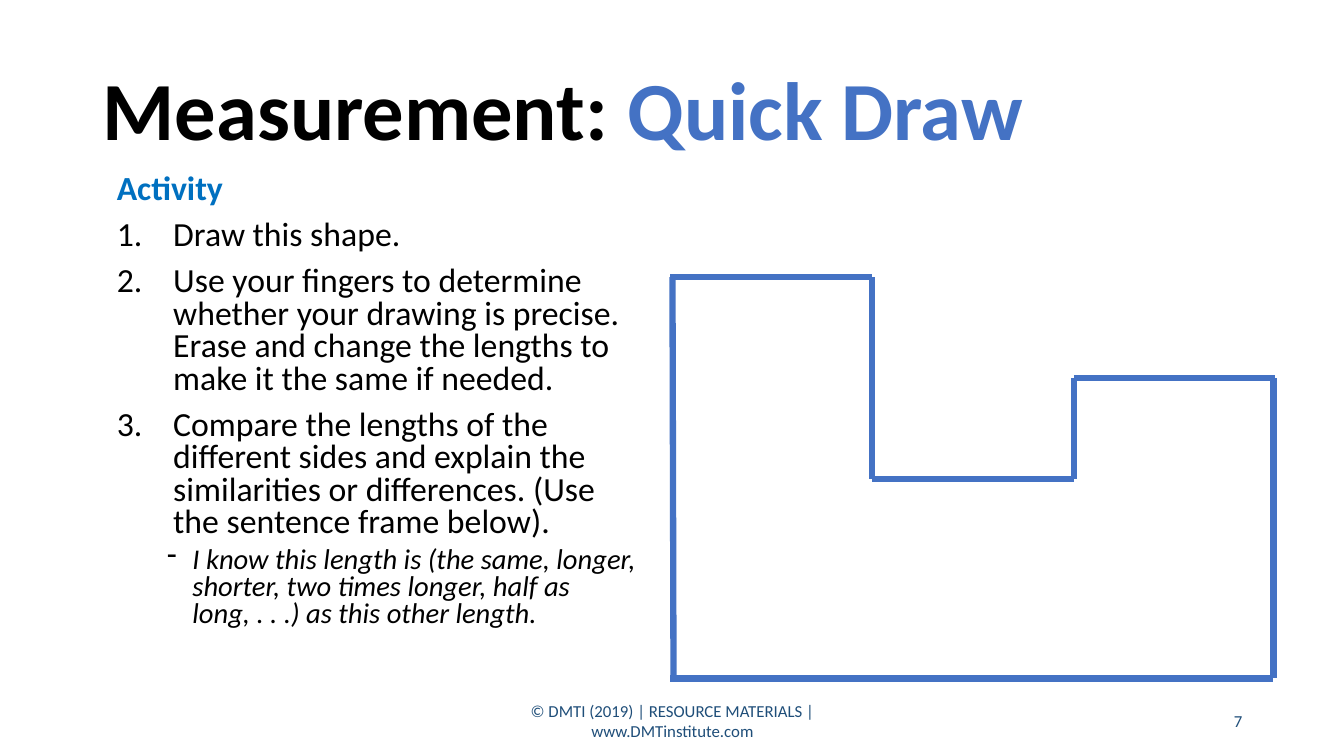
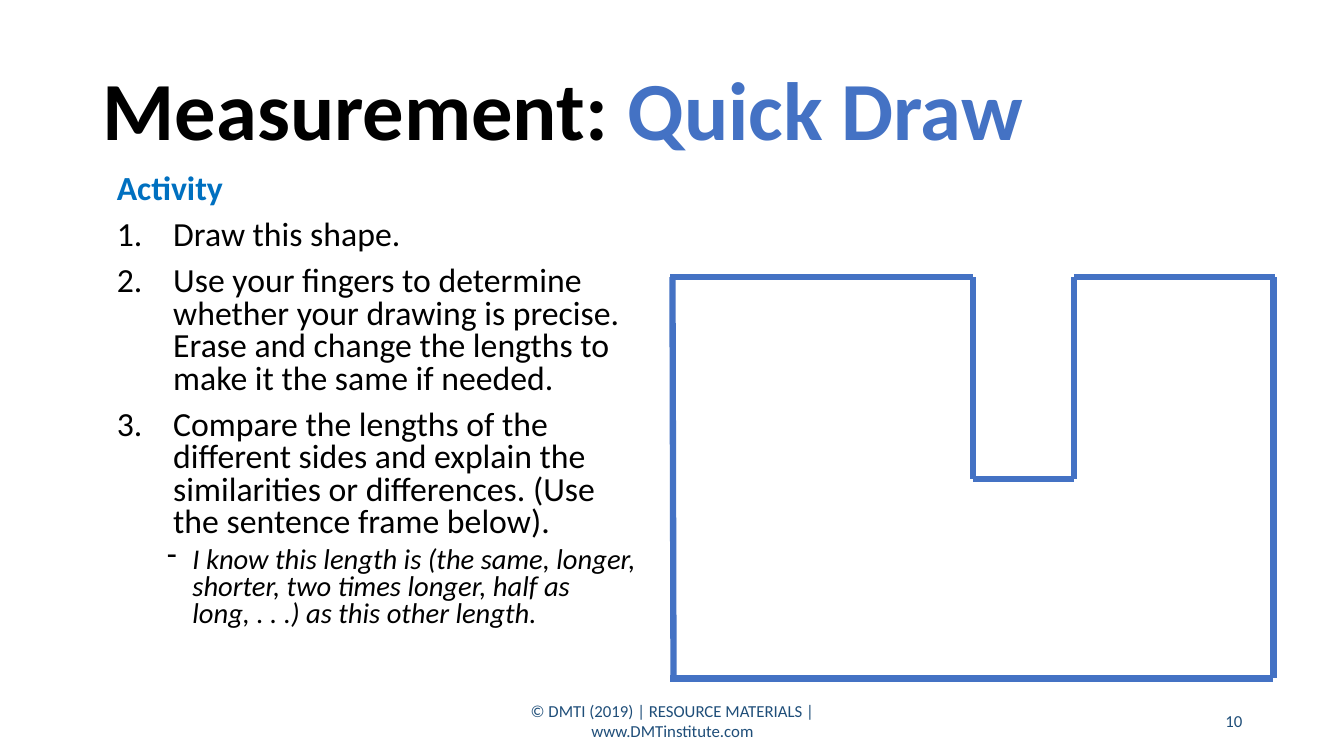
from lxml.etree import SubElement
from pptx import Presentation
from pptx.dml.color import RGBColor
from pptx.enum.shapes import MSO_CONNECTOR
from pptx.enum.text import MSO_ANCHOR, PP_ALIGN
from pptx.oxml.ns import qn
from pptx.util import Inches, Pt

BLACK = RGBColor(0x00, 0x00, 0x00)
BLUE = RGBColor(0x44, 0x72, 0xC4)
HEADING_BLUE = RGBColor(0x00, 0x70, 0xC0)
FOOTER_BLUE = RGBColor(0x1F, 0x4E, 0x79)

# Text styles
FONT = "Calibri"
TITLE = {"size": Pt(59), "bold": True}
HEADING = {"size": Pt(24.1), "bold": True}
STEP = {"size": Pt(24.1)}
FRAME = {"size": Pt(20.4), "italic": True}
FOOTER = {"size": Pt(12)}

STEPS = [
    "Draw this shape.",
    "Use your fingers to determine whether your drawing is precise. "
    "Erase and change the lengths to make it the same if needed.",
    "Compare the lengths of the different sides and explain the similarities "
    "or differences. (Use the sentence frame below).",
]
SENTENCE_FRAME = ("I know this length is (the same, longer, shorter, two times longer, "
                  "half as long, . . .) as this other length.")
COPYRIGHT = "© DMTI (2019) | RESOURCE MATERIALS | www.DMTinstitute.com"

# Edges of the drawn shape, in inches
LEFT, RIGHT = 6.65, 12.63
TOP, BOTTOM = 2.75, 6.73
NOTCH_RIGHT, NOTCH_BOTTOM = 10.65, 4.75

# Page number, left edge of the notch, top of the right arm
SLIDES = [("7", 8.65, 3.75), ("10", 9.65, 2.75)]


def add_text_box(s, left, top, width, height, anchor=MSO_ANCHOR.TOP):
    box = s.shapes.add_textbox(Inches(left), Inches(top), Inches(width), Inches(height))
    tf = box.text_frame
    tf.word_wrap = True
    tf.vertical_anchor = anchor
    return tf


def add_run(p, text, style, color):
    r = p.add_run()
    r.text = text
    r.font.name = FONT
    for name, value in style.items():
        setattr(r.font, name, value)
    r.font.color.rgb = color


def add_bullet(p, margin, hang, tag, **attributes):
    pPr = p._p.get_or_add_pPr()
    pPr.set("marL", str(Inches(margin)))
    pPr.set("indent", str(-Inches(hang)))
    SubElement(pPr, qn(f"a:{tag}"), attributes)


def add_title(s):
    tf = add_text_box(s, 0.92, 0.4, 11.5, 1.45, MSO_ANCHOR.MIDDLE)
    p = tf.paragraphs[0]
    p.line_spacing = 0.9
    add_run(p, "Measurement: ", TITLE, BLACK)
    add_run(p, "Quick Draw", TITLE, BLUE)


def add_footer(s, left, width, text, align):
    p = add_text_box(s, left, 6.95, width, 0.4, MSO_ANCHOR.MIDDLE).paragraphs[0]
    p.alignment = align
    add_run(p, text, FOOTER, FOOTER_BLUE)


def add_activity(s):
    tf = add_text_box(s, 1.06, 1.68, 5.41, 4.77)
    add_run(tf.paragraphs[0], "Activity", HEADING, HEADING_BLUE)
    # Numbered steps
    for step in STEPS:
        p = tf.add_paragraph()
        add_bullet(p, 0.56, 0.56, "buAutoNum", type="arabicPeriod")
        p.space_before = Pt(10)
        add_run(p, step, STEP, BLACK)
    # Sentence frame under the last step
    p = tf.add_paragraph()
    p.level = 1
    add_bullet(p, 0.75, 0.25, "buChar", char="-")
    p.space_before = Pt(5)
    add_run(p, SENTENCE_FRAME, FRAME, BLACK)
    for p in tf.paragraphs:
        p.line_spacing = 0.8


def add_line(s, x1, y1, x2, y2):
    line = s.shapes.add_connector(
        MSO_CONNECTOR.STRAIGHT, Inches(x1), Inches(y1), Inches(x2), Inches(y2))
    line.line.color.rgb = BLUE
    line.line.width = Pt(4.5)
    SubElement(line._element.spPr, qn("a:effectLst"))


def add_notched_shape(s, notch_left, arm_top):
    sides = [
        (RIGHT, arm_top, RIGHT, BOTTOM),
        (LEFT, BOTTOM, RIGHT, BOTTOM),
        (notch_left, NOTCH_BOTTOM, NOTCH_RIGHT, NOTCH_BOTTOM),
        (LEFT + 0.02, TOP, LEFT + 0.03, BOTTOM),
        (notch_left, TOP, notch_left, NOTCH_BOTTOM),
        (NOTCH_RIGHT, arm_top, NOTCH_RIGHT, NOTCH_BOTTOM),
        (NOTCH_RIGHT, arm_top, RIGHT + 0.02, arm_top),
        (LEFT, TOP, notch_left, TOP),
    ]
    for side in sides:
        add_line(s, *side)


def main():
    prs = Presentation()
    prs.slide_width, prs.slide_height = Inches(13.33), Inches(7.5)
    for number, notch_left, arm_top in SLIDES:
        s = prs.slides.add_slide(prs.slide_layouts[6])
        add_title(s)
        add_footer(s, 4.42, 4.5, COPYRIGHT, PP_ALIGN.CENTER)
        add_footer(s, 9.42, 3, number, PP_ALIGN.RIGHT)
        add_notched_shape(s, notch_left, arm_top)
        add_activity(s)
    prs.save("out.pptx")


if __name__ == "__main__":
    main()
